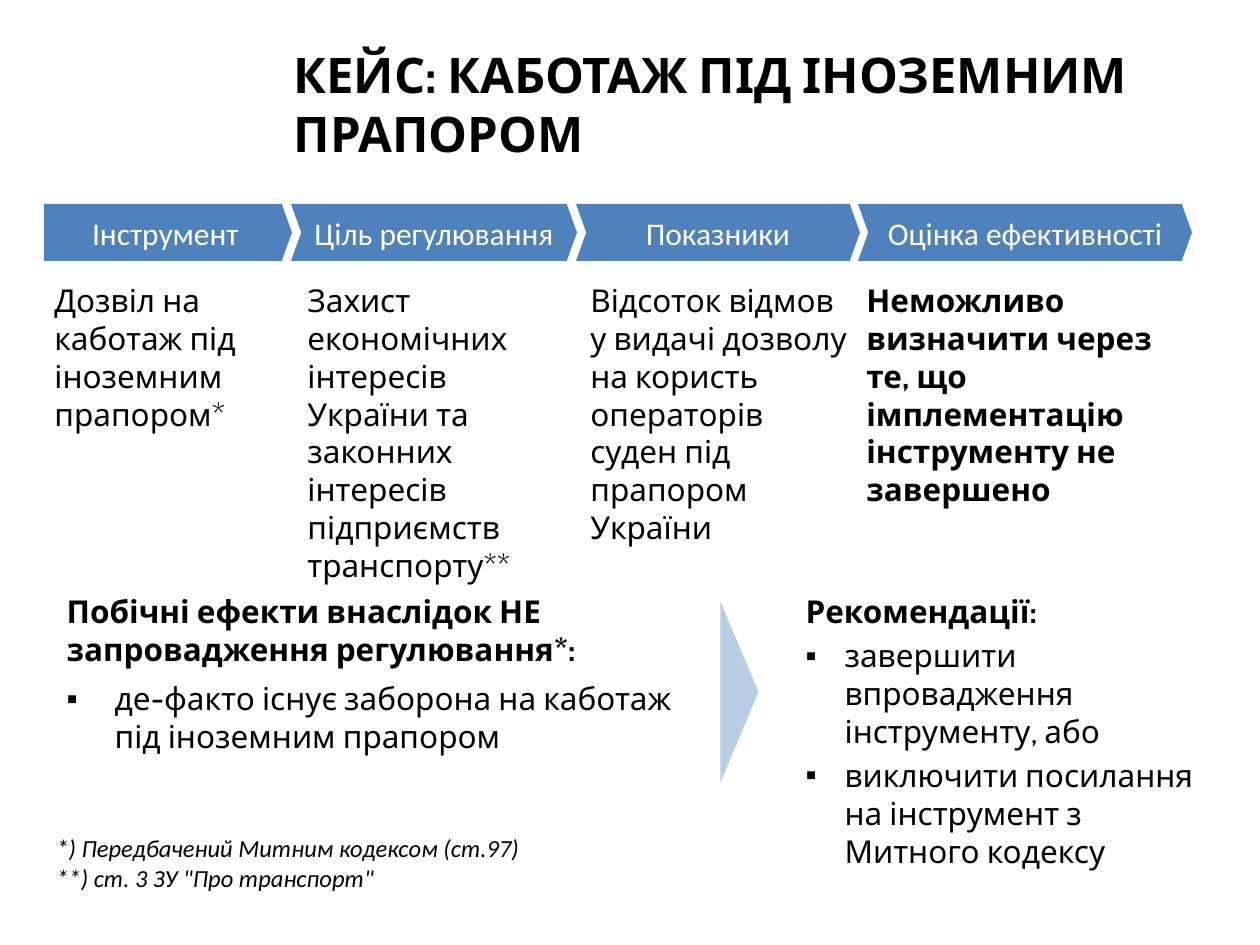
from dataclasses import dataclass
from typing import NamedTuple

from lxml.etree import SubElement
from pptx import Presentation
from pptx.dml.color import RGBColor
from pptx.enum.shapes import MSO_SHAPE
from pptx.enum.text import MSO_ANCHOR, MSO_AUTO_SIZE, PP_ALIGN
from pptx.oxml.ns import qn
from pptx.util import Inches, Pt

PX = Inches(1) / 126


@dataclass(frozen=True)
class Theme:
    blue: RGBColor = RGBColor(0x4F, 0x81, 0xBD)
    pale: RGBColor = RGBColor(0xB9, 0xCD, 0xE5)
    black: RGBColor = RGBColor(0, 0, 0)
    white: RGBColor = RGBColor(255, 255, 255)
    main: str = "Cabin"
    plain: str = "Calibri"
    title: int = 28
    body: int = 18
    note: int = 14


THEME = Theme()


class Box(NamedTuple):
    left: int
    top: int
    width: int
    height: int

    def emu(self):
        return [round(value * PX) for value in self]

    def inner(self, left, top, width, height):
        return Box(self.left + left, self.top + top, width, height)


class Column(NamedTuple):
    heading: str
    head_left: int
    head_width: int
    text: str
    text_left: int
    text_width: int
    text_height: int
    bold: bool = False


COLUMNS = [
    Column("Інструмент", 2, 248,
           "Дозвіл на каботаж під іноземним прапором*", 0, 239, 149),
    Column("Ціль регулювання", 249, 286,
           "Захист економічних інтересів  України та законних інтересів "
           "підприємств транспорту**", 253, 281, 307),
    Column("Показники", 534, 284,
           "Відсоток відмов у видачі дозволу на користь операторів суден "
           "під прапором України", 536, 290, 239),
    Column("Оцінка ефективності", 816, 334,
           "Неможливо визначити через те, що імплементацію інструменту "
           "не завершено", 812, 340, 222, True),
]


def place(shape, box):
    shape.left, shape.top, shape.width, shape.height = box.emu()


def style(para, size, name=THEME.main, color=THEME.black, bold=False, italic=False):
    font = para.font
    font.size, font.name = Pt(size), name
    font.bold, font.italic = bold, italic
    font.color.rgb = color


def set_bullet(para, mark, indent):
    props = para._p.get_or_add_pPr()
    props.set("marL", str(round(indent * PX)))
    props.set("indent", str(-round(indent * PX)))
    if mark:
        SubElement(props, qn("a:buFont"), typeface="Arial")
        SubElement(props, qn("a:buChar"), char=mark)
    else:
        SubElement(props, qn("a:buNone"))


def add_figure(page, preset, box, color):
    shape = page.shapes.add_shape(preset, *box.emu())
    shape.shadow.inherit = False
    shape.fill.solid()
    shape.fill.fore_color.rgb = color
    shape.line.fill.background()
    return shape


def add_text(page, box, lines, **look):
    frame = page.shapes.add_textbox(*box.emu()).text_frame
    frame.word_wrap = True
    for number, line in enumerate(lines):
        para = frame.add_paragraph() if number else frame.paragraphs[0]
        para.text = line
        style(para, **look)


def fill_title(page, box, text):
    title = page.shapes.title
    place(title, box)
    frame = title.text_frame
    frame.auto_size = MSO_AUTO_SIZE.NONE
    frame.vertical_anchor = MSO_ANCHOR.TOP
    para = frame.paragraphs[0]
    para.text = text
    para.alignment = PP_ALIGN.LEFT
    style(para, THEME.title, bold=True)


def add_header(page, box, preset, text):
    shape = add_figure(page, preset, box, THEME.blue)
    shape.adjustments[0] = 0.18
    frame = shape.text_frame
    frame.margin_left = frame.margin_right = 0
    frame.vertical_anchor = MSO_ANCHOR.MIDDLE
    para = frame.paragraphs[0]
    para.text = text
    para.alignment = PP_ALIGN.CENTER
    style(para, THEME.body, THEME.plain, THEME.white)


def add_chain(page, box):
    for number, column in enumerate(COLUMNS):
        preset = MSO_SHAPE.CHEVRON if number else MSO_SHAPE.PENTAGON
        add_header(page, box.inner(column.head_left, 0, column.head_width, 57),
                   preset, column.heading)
        add_text(page, box.inner(column.text_left, 71, column.text_width, column.text_height),
                 [column.text], size=THEME.body, bold=column.bold)


def fill_list(holder, box, heading, items, indent, gap):
    place(holder, box)
    frame = holder.text_frame
    frame.auto_size = MSO_AUTO_SIZE.NONE
    for number, text in enumerate([heading, *items]):
        para = frame.add_paragraph() if number else frame.paragraphs[0]
        para.text = text
        para.space_before = Pt(gap if number else 0)
        set_bullet(para, "▪" if number else None, indent if number else 0)
        style(para, THEME.body, bold=number == 0)


def add_outcome(page, box):
    fill_list(page.placeholders[1], box.inner(0, 0, 665, 285),
              "Побічні ефекти внаслідок НЕ\nзапровадження регулювання*:",
              ["де-факто існує заборона на каботаж під іноземним прапором"], 48, 6.5)
    arrow = add_figure(page, MSO_SHAPE.ISOSCELES_TRIANGLE,
                       box.inner(595, 87, 181, 38), THEME.pale)
    arrow.rotation = 90
    fill_list(page.placeholders[2], box.inner(739, 0, 436, 285), "Рекомендації:",
              ["завершити впровадження інструменту, або",
               "виключити посилання на інструмент з Митного кодексу"], 39, 3.6)


def main():
    deck = Presentation()
    deck.slide_width, deck.slide_height = Inches(10), Inches(7.5)
    page = deck.slides.add_slide(deck.slide_layouts[3])
    fill_title(page, Box(281, 38, 916, 157), "КЕЙС: КАБОТАЖ ПІД ІНОЗЕМНИМ ПРАПОРОМ")
    add_chain(page, Box(42, 204, 1152, 378))
    add_outcome(page, Box(54, 586, 1175, 285))
    add_text(page, Box(44, 827, 576, 72),
             ["*) Передбачений Митним кодексом (ст.97)", '**) ст. 3 ЗУ "Про транспорт"'],
             size=THEME.note, name=THEME.plain, italic=True)
    deck.save("out.pptx")


if __name__ == "__main__":
    main()
